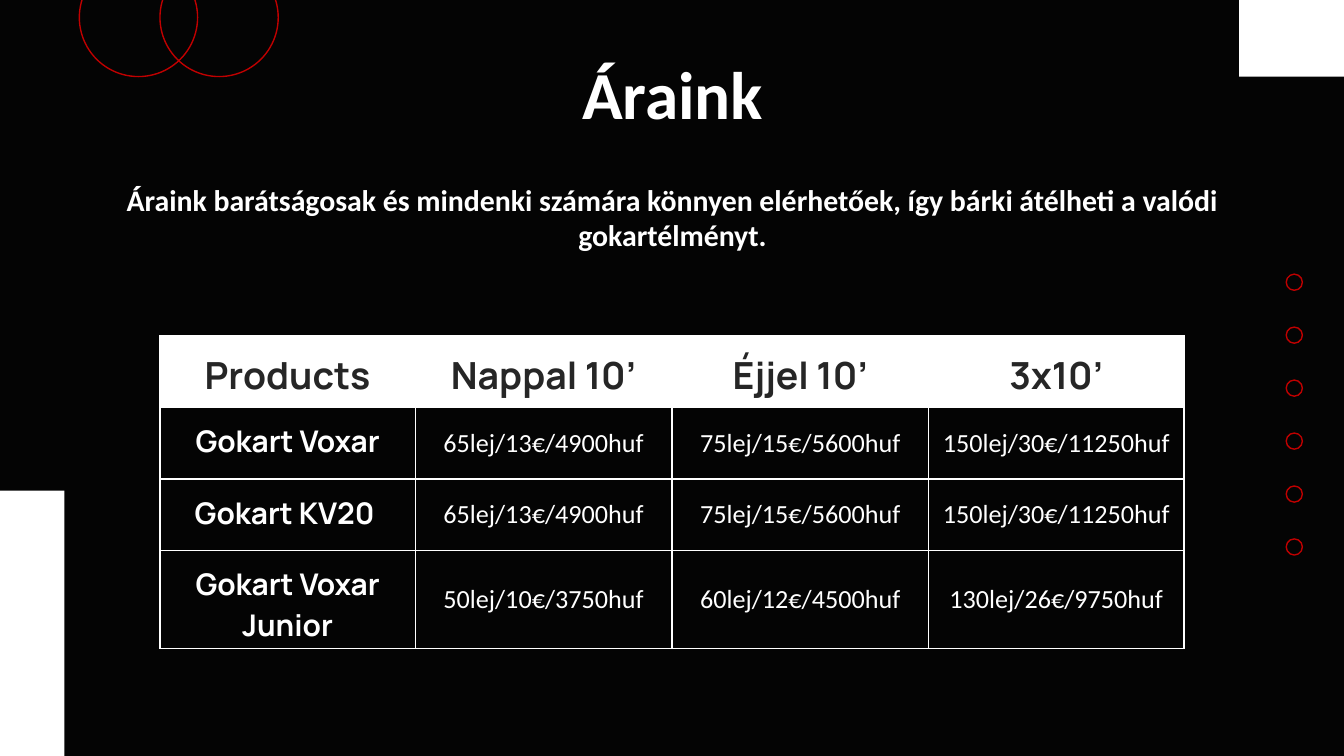
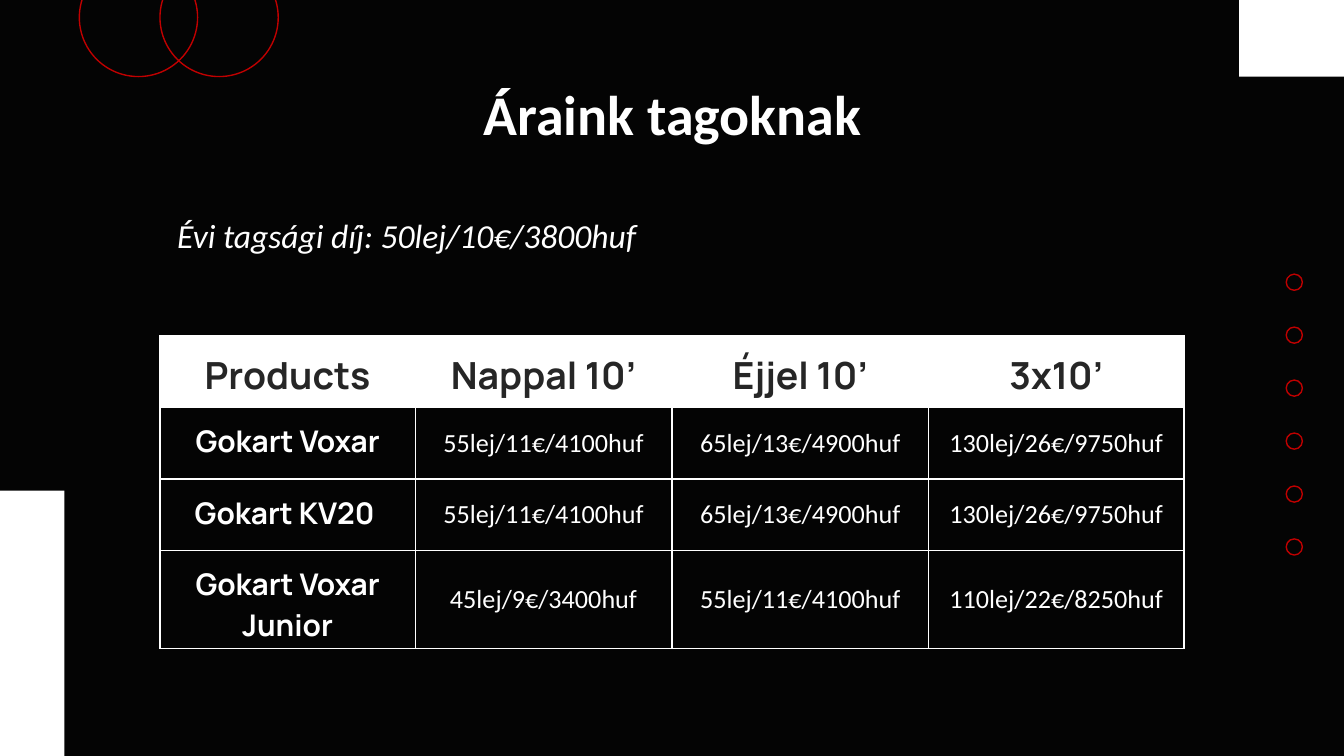
from lxml import etree
from pptx import Presentation
from pptx.dml.color import RGBColor
from pptx.enum.shapes import MSO_SHAPE
from pptx.enum.text import MSO_ANCHOR, PP_ALIGN
from pptx.oxml.ns import qn
from pptx.util import Inches, Pt

OVAL, RECT = MSO_SHAPE.OVAL, MSO_SHAPE.RECTANGLE
TOP, MIDDLE = MSO_ANCHOR.TOP, MSO_ANCHOR.MIDDLE
LEFT, CENTER = PP_ALIGN.LEFT, PP_ALIGN.CENTER

WIDTH = 10
HEIGHT = WIDTH * 9 / 16
BLACK, WHITE, RED, DARK = "040404", "FFFFFF", "C00000", "262626"
BODY_FONT, LABEL_FONT = "Calibri", "Manrope"

HEADINGS = ["Products", "Nappal 10’", "Éjjel 10’", "3x10’"]
KARTS = ["Gokart Voxar", "Gokart KV20 ", "Gokart Voxar Junior"]

PRICE_PAGES = [
    {
        "title": "Áraink", "title_top": 0.29, "title_size": 36,
        "intro": "Áraink barátságosak és mindenki számára könnyen elérhetőek, "
                 "így bárki átélheti a valódi gokartélményt.",
        "intro_box": (0.79, 1.3, 8.43, 0.63),
        "intro_style": {"size": 16, "bold": True},
        "intro_place": {"align": CENTER, "anchor": MIDDLE, "inset": 0.1},
        "prices": [
            ["65lej/13€/4900huf", "75lej/15€/5600huf", "150lej/30€/11250huf"],
            ["65lej/13€/4900huf", "75lej/15€/5600huf", "150lej/30€/11250huf"],
            ["50lej/10€/3750huf", "60lej/12€/4500huf", "130lej/26€/9750huf"],
        ],
    },
    {
        "title": "Áraink tagoknak", "title_top": 0.49, "title_size": 30,
        "intro": "Évi tagsági díj: 50lej/10€/3800huf",
        "intro_box": (1.22, 1.55, 3.85, 0.49),
        "intro_style": {"size": 18, "italic": True},
        "intro_place": {"align": LEFT, "anchor": TOP, "inset": 0.05},
        "prices": [
            ["55lej/11€/4100huf", "65lej/13€/4900huf", "130lej/26€/9750huf"],
            ["55lej/11€/4100huf", "65lej/13€/4900huf", "130lej/26€/9750huf"],
            ["45lej/9€/3400huf", "55lej/11€/4100huf", "110lej/22€/8250huf"],
        ],
    },
]

DOT_COUNT, DOT_SIZE, DOT_LEFT = 6, 0.12, 9.57
DOT_FIRST, DOT_LAST = 2.04, 4.01
DOT_PITCH = (DOT_LAST - DOT_FIRST) / (DOT_COUNT - 1)
RING_SIZE, RING_TOP, RING_LEFTS = 0.88, -0.31, (1.19, 0.59)
CORNERS = [(9.22, -0.02, 0.78, 0.59), (0, 3.65, 0.48, 1.98)]
TITLE_LEFT, TITLE_WIDTH, TITLE_HEIGHT = 0.79, 8.43, 0.63
TABLE_BOX = (1.19, 2.5, 7.62, 2.45)
COLUMN_WIDTHS, ROW_HEIGHT = (1.9, 1.91, 1.91, 1.9), 0.53


def color(hex_code):
    return RGBColor.from_string(hex_code)


def inches(box):
    return [Inches(length) for length in box]


def write(frame, text, size, align=CENTER, font=BODY_FONT, ink=WHITE,
          bold=False, italic=False):
    paragraph = frame.paragraphs[0]
    paragraph.alignment = align
    run = paragraph.add_run()
    run.text = text
    run.font.size = Pt(size)
    run.font.name = font
    run.font.bold = bold
    run.font.italic = italic
    run.font.color.rgb = color(ink)


def add_text(slide, box, text, align, anchor, inset, **style):
    frame = slide.shapes.add_textbox(*inches(box)).text_frame
    frame.word_wrap = True
    frame.vertical_anchor = anchor
    frame.margin_left = frame.margin_right = Inches(0.1)
    frame.margin_top = frame.margin_bottom = Inches(inset)
    write(frame, text, align=align, **style)


def add_ornament(slide, kind, box, fill=None, line=None):
    ornament = slide.shapes.add_shape(kind, *inches(box))
    ornament.shadow.inherit = False
    if fill:
        ornament.fill.solid()
        ornament.fill.fore_color.rgb = color(fill)
    else:
        ornament.fill.background()
    if line:
        ornament.line.color.rgb = color(line)
        ornament.line.width = Pt(0.75)
    else:
        ornament.line.fill.background()


def decorate(slide):
    slide.background.fill.solid()
    slide.background.fill.fore_color.rgb = color(BLACK)
    for number in range(DOT_COUNT):
        dot = (DOT_LEFT, DOT_FIRST + number * DOT_PITCH, DOT_SIZE, DOT_SIZE)
        add_ornament(slide, OVAL, dot, line=RED)
    for corner in CORNERS:
        add_ornament(slide, RECT, corner, fill=WHITE)
    for left in RING_LEFTS:
        add_ornament(slide, OVAL, (left, RING_TOP, RING_SIZE, RING_SIZE), line=RED)


def outline(cell):
    properties = cell._tc.get_or_add_tcPr()
    for side in ("a:lnL", "a:lnR", "a:lnT", "a:lnB"):
        border = etree.SubElement(properties, qn(side), w=str(Pt(0.75)))
        paint = etree.SubElement(border, qn("a:solidFill"))
        etree.SubElement(paint, qn("a:srgbClr"), val=WHITE)


def add_price_table(slide, prices):
    rows = [HEADINGS] + [[kart] + row for kart, row in zip(KARTS, prices)]
    holder = slide.shapes.add_table(len(rows), len(HEADINGS), *inches(TABLE_BOX))
    table = holder.table
    table.first_row = table.horz_banding = False
    for column, width in zip(table.columns, COLUMN_WIDTHS):
        column.width = Inches(width)
    for row in table.rows:
        row.height = Inches(ROW_HEIGHT)
    holder.height = Inches(TABLE_BOX[3])

    for r, row in enumerate(rows):
        for c, text in enumerate(row):
            cell = table.cell(r, c)
            outline(cell)
            cell.margin_left = cell.margin_right = Inches(0.1)
            cell.margin_top = cell.margin_bottom = Inches(0.1)
            cell.vertical_anchor = TOP if r and c == 0 else MIDDLE
            if r == 0:
                cell.fill.solid()
                cell.fill.fore_color.rgb = color(WHITE)
                style = {"size": 20, "font": LABEL_FONT, "ink": DARK, "bold": True}
            else:
                cell.fill.background()
                style = {"size": 14}
                if c == 0:
                    style = {"size": 16, "font": LABEL_FONT, "bold": True}
            write(cell.text_frame, text, **style)


def main():
    deck = Presentation()
    deck.slide_width, deck.slide_height = inches((WIDTH, HEIGHT))
    for page in PRICE_PAGES:
        slide = deck.slides.add_slide(deck.slide_layouts[6])
        decorate(slide)
        title_box = (TITLE_LEFT, page["title_top"], TITLE_WIDTH, TITLE_HEIGHT)
        add_text(slide, title_box, page["title"], CENTER, TOP, 0.1,
                 size=page["title_size"], bold=True)
        add_text(slide, page["intro_box"], page["intro"],
                 **page["intro_place"], **page["intro_style"])
        add_price_table(slide, page["prices"])
    deck.save("out.pptx")


if __name__ == "__main__":
    main()
